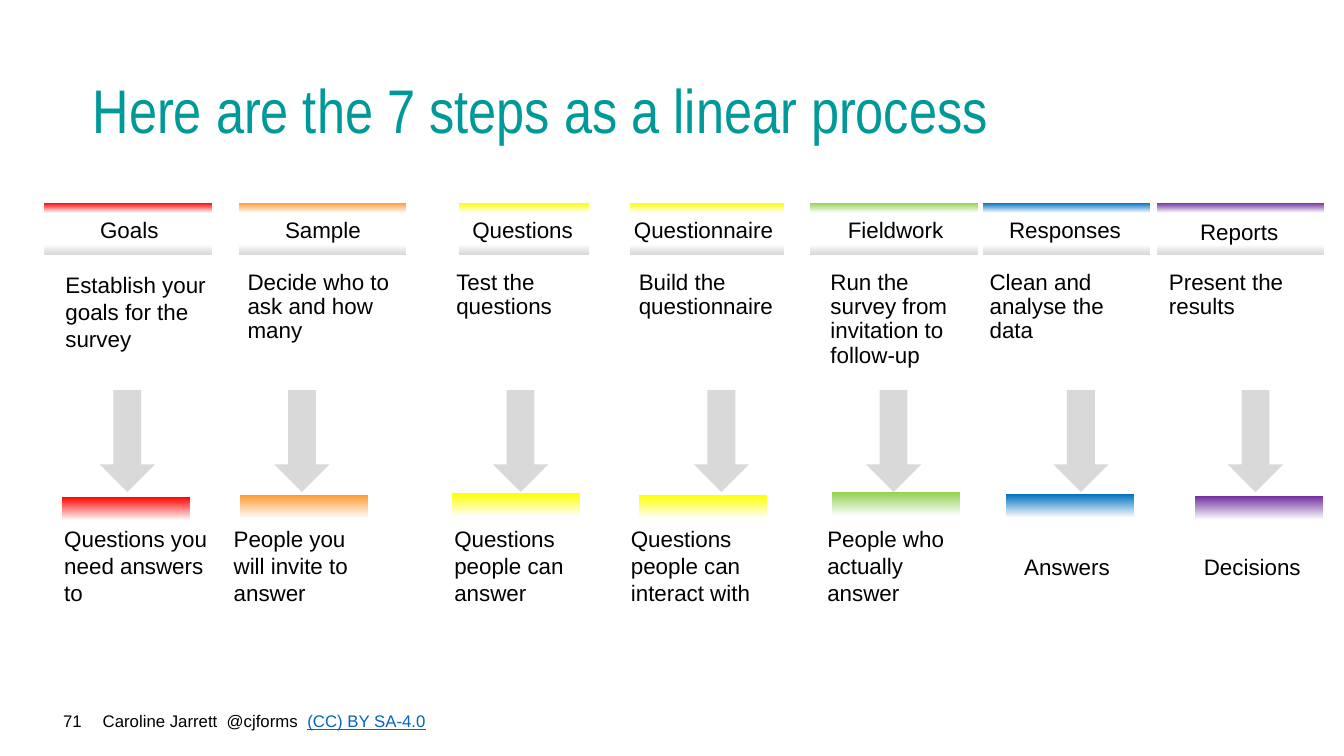
from lxml import etree
from pptx import Presentation
from pptx.dml.color import RGBColor
from pptx.enum.shapes import MSO_SHAPE as Kind
from pptx.enum.text import MSO_ANCHOR as Anchor, MSO_AUTO_SIZE as Auto, PP_ALIGN as Align
from pptx.oxml.ns import qn
from pptx.util import Cm, Pt

RED = RGBColor(0xFF, 0x00, 0x00)
ORANGE = RGBColor(0xFF, 0x99, 0x33)
YELLOW = RGBColor(0xFF, 0xFF, 0x00)
GREEN = RGBColor(0x92, 0xD0, 0x50)
BLUE = RGBColor(0x00, 0x70, 0xC0)
PURPLE = RGBColor(0x70, 0x30, 0xA0)
GREY = RGBColor(0xD9, 0xD9, 0xD9)
WHITE = RGBColor(0xFF, 0xFF, 0xFF)
BLACK = RGBColor(0x00, 0x00, 0x00)
TEAL = RGBColor(0x00, 0x99, 0x99)
LINK = RGBColor(0x05, 0x63, 0xC1)

deck = Presentation()
deck.slide_width, deck.slide_height = Cm(33.87), Cm(19.05)
slide = deck.slides.add_slide(deck.slide_layouts[5])
shapes = slide.shapes


def write(words, left, top, width, height, size=16, align=Align.LEFT, space=1.0):
    box = shapes.add_textbox(Cm(left), Cm(top), Cm(width), Cm(height))
    box.text_frame.word_wrap = True
    para = box.text_frame.paragraphs[0]
    para.alignment, para.line_spacing = align, space
    run = para.add_run()
    run.text = words
    run.font.name, run.font.size = "Arial", Pt(size)
    run.font.color.rgb = BLACK
    return box.text_frame


def draw(kind, left, top, width, height, stops):
    shape = shapes.add_shape(kind, Cm(left), Cm(top), Cm(width), Cm(height))
    shape.shadow.inherit = False
    shape.line.fill.background()
    if len(stops) == 1:
        shape.fill.solid()
        shape.fill.fore_color.rgb = stops[0][1]
        return
    shape.fill.gradient()
    shape.fill.gradient_angle = 270
    ramp = next(shape.element.iter(qn("a:gsLst")))
    for old in list(ramp):
        ramp.remove(old)
    for pos, color in stops:
        stop = etree.SubElement(ramp, qn("a:gs"), pos=str(pos * 1000))
        etree.SubElement(stop, qn("a:srgbClr"), val=str(color))


title = shapes.title
title.left, title.top, title.width, title.height = Cm(2.08), Cm(1.02), Cm(29.46), Cm(3.68)
frame = title.text_frame
frame.auto_size, frame.vertical_anchor = Auto.NONE, Anchor.MIDDLE
para = frame.paragraphs[0]
para.alignment, para.line_spacing = Align.LEFT, 0.9
run = para.add_run()
run.text = "Here are the 7 steps as a linear process"
run.font.name, run.font.size = "Arial Narrow", Pt(44)
run.font.color.rgb = TEAL

# name, task, result, color, bar (left, width), name (left, top, width), task left, arrow left, block (left, top), result left
steps = [
    ("Goals", "Establish your goals for the survey", "Questions you need answers to", RED,
     (1.12, 4.22), (1.19, 5.31, 4.14), 1.4, 2.51, (1.57, 12.52), 1.37),
    ("Sample", "Decide who to ask and how many", "People you will invite to answer", ORANGE,
     (6.02, 4.22), (6.07, 5.31, 4.14), 5.99, 6.91, (6.05, 12.47), 5.64),
    ("Questions", "Test the questions", "Questions people can answer", YELLOW,
     (11.56, 3.28), (11.1, 5.33, 4.14), 11.25, 12.42, (11.4, 12.42), 11.2),
    ("Questionnaire", "Build the questionnaire", "Questions people can interact with", YELLOW,
     (15.88, 3.89), (15.34, 5.33, 4.78), 15.85, 17.48, (16.1, 12.47), 15.65),
    ("Fieldwork", "Run the survey from invitation to follow-up", "People who actually answer", GREEN,
     (20.42, 4.22), (20.5, 5.31, 4.14), 20.68, 21.82, (20.96, 12.4), 20.6),
    ("Responses", "Clean and analyse the data", "Answers", BLUE,
     (24.77, 4.22), (24.77, 5.33, 4.14), 24.69, 26.54, (25.35, 12.45), 24.82),
    ("Reports", "Present the results", "Decisions", PURPLE,
     (29.16, 4.22), (29.16, 5.38, 4.14), 29.21, 30.94, (30.12, 12.5), 29.49),
]

for name, task, result, color, bar, head, task_x, arrow_x, block, end_x in steps:
    fade = [(0, color), (20, WHITE)]
    draw(Kind.RECTANGLE, *block, 3.23, 3.0, fade)
    draw(Kind.DOWN_ARROW, arrow_x, 9.83, 1.4, 2.57, [(0, GREY)])
    draw(Kind.RECTANGLE, bar[0], 5.11, bar[1], 1.3, fade + [(80, WHITE), (100, GREY)])
    write(name, *head, 0.94, align=Align.CENTER)
    write(task, task_x, 6.71, head[2], 2.31, space=1.0 if name == "Goals" else 0.9)
    short = " " not in result
    end = write(result, end_x, 13.11, 4.14, 2.31, align=Align.CENTER if short else Align.LEFT)
    end.vertical_anchor = Anchor.MIDDLE if short else Anchor.TOP

write("71", 0, 17.78, 2.31, 0.76, 12, Align.RIGHT)
foot = write("Caroline Jarrett  @cjforms  ", 2.34, 17.78, 14.5, 0.76, 12)
run = foot.paragraphs[0].add_run()
run.text = "(CC) BY SA-4.0"
run.font.name, run.font.size, run.font.underline = "Arial", Pt(12), True
run.font.color.rgb = LINK

deck.save("out.pptx")
